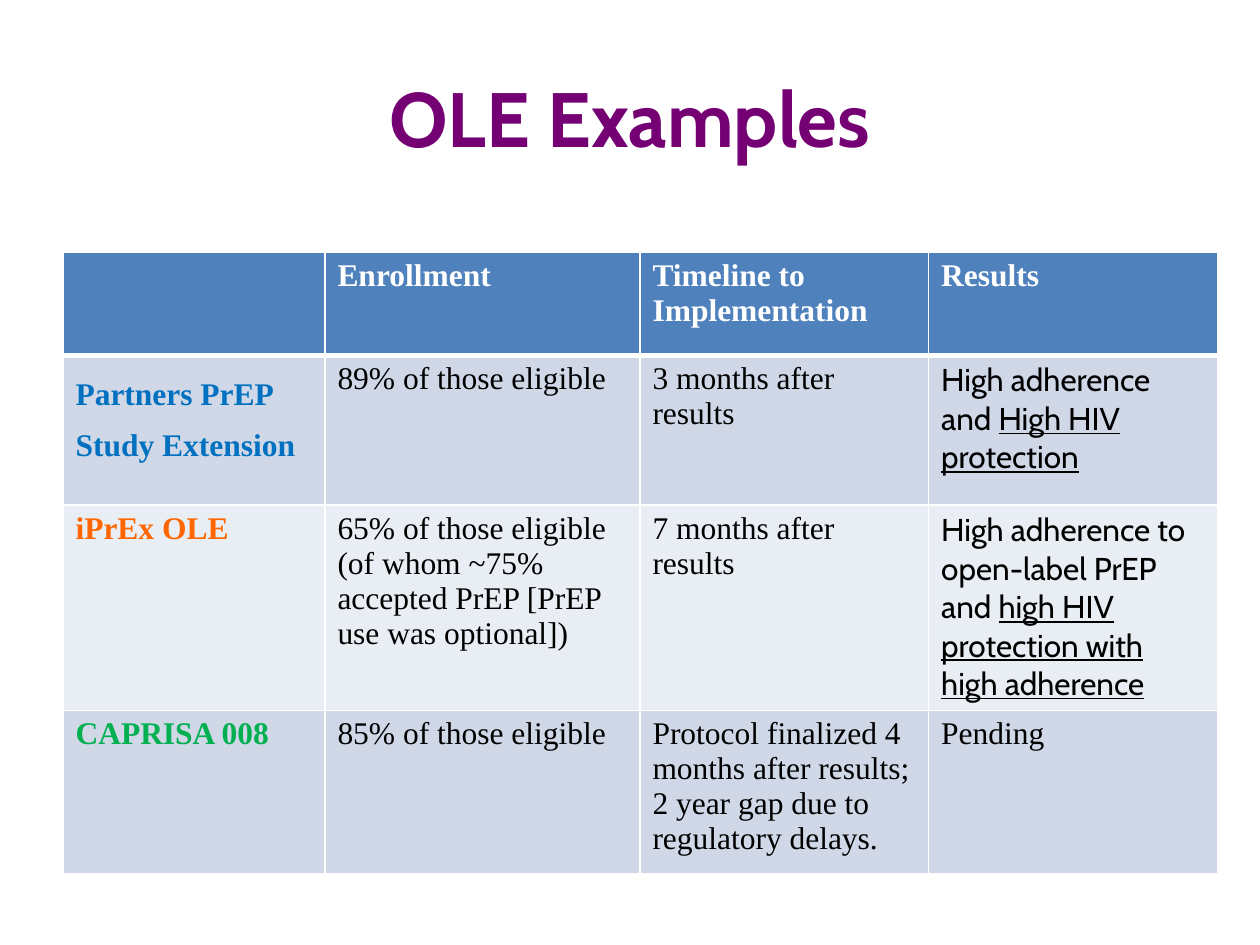
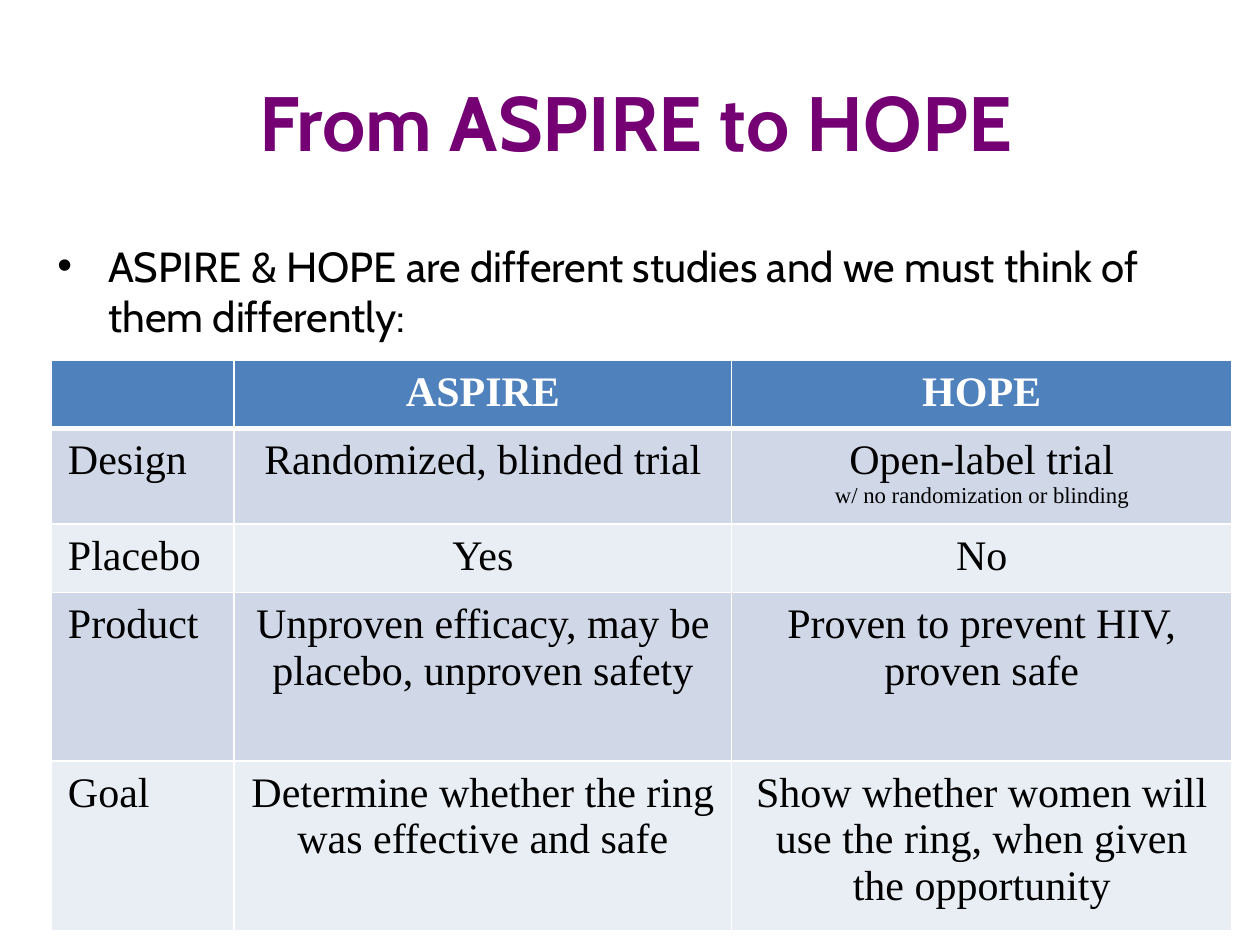
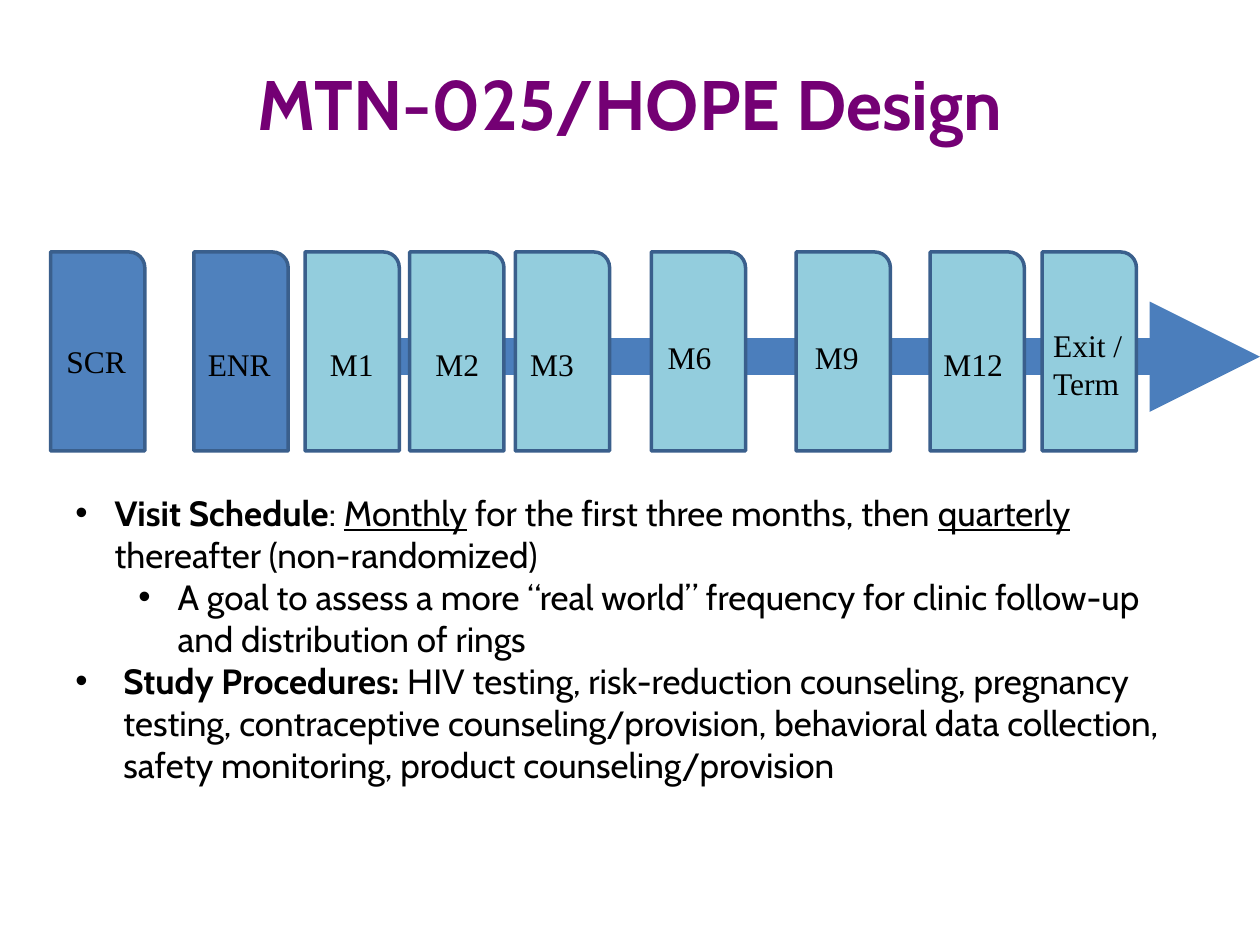
from lxml import etree
from pptx import Presentation
from pptx.dml.color import RGBColor
from pptx.enum.shapes import MSO_CONNECTOR, MSO_SHAPE
from pptx.enum.text import MSO_ANCHOR, PP_ALIGN
from pptx.oxml.ns import qn
from pptx.util import Cm, Pt

CENTER, LEFT = PP_ALIGN.CENTER, PP_ALIGN.LEFT
MIDDLE, TOP = MSO_ANCHOR.MIDDLE, MSO_ANCHOR.TOP
CARD, STRAIGHT = MSO_SHAPE.ROUND_1_RECTANGLE, MSO_CONNECTOR.STRAIGHT

# Shared look
SANS, SERIF = "Cabin", "Times New Roman"
PURPLE, BLACK, WHITE = "740074", "000000", "FFFFFF"
BLUE, AQUA, EDGE, SHAFT = "4F81BD", "93CDDD", "3A5F8C", "4B7EBC"
BANDS = ("D0D8E8", "E9EDF4")


def color(code):
    return RGBColor.from_string(code)


# Text
def write(para, parts, font=SANS, size=18, ink=BLACK, bold=False, align=LEFT):
    """Fill a paragraph from a string or from (text, marks) pairs."""
    if isinstance(parts, str):
        para.text = parts
        marks = [""]
    else:
        for text, _ in parts:
            para.add_run().text = text
        marks = [mark for _, mark in parts]
    para.alignment = align
    for run, mark in zip(para.runs, marks):
        run.font.name = font
        run.font.size = Pt(size)
        run.font.color.rgb = color(ink)
        run.font.bold = bold or "b" in mark
        run.font.underline = "u" in mark


def add_box(slide, left, top, width, height, anchor=TOP):
    box = slide.shapes.add_textbox(Cm(left), Cm(top), Cm(width), Cm(height))
    frame = box.text_frame
    frame.word_wrap = True
    frame.vertical_anchor = anchor
    return frame


def add_title(slide, text, left, top, width, height, size=44):
    frame = add_box(slide, left, top, width, height, MIDDLE)
    write(frame.paragraphs[0], text, size=size, ink=PURPLE, bold=True, align=CENTER)


def add_list(slide, items, left, top, width, height, size):
    """Each item is (left margin, hanging indent, parts)."""
    frame = add_box(slide, left, top, width, height)
    for index, (margin, hang, parts) in enumerate(items):
        para = frame.add_paragraph() if index else frame.paragraphs[0]
        props = para._p.get_or_add_pPr()
        props.set("marL", str(Cm(margin)))
        props.set("indent", str(-Cm(hang)))
        etree.SubElement(props, qn("a:buFont"), typeface="Arial")
        etree.SubElement(props, qn("a:buChar"), char="•")
        write(para, parts, size=size)


# Tables
def add_edges(cell, row):
    props = cell._tc.get_or_add_tcPr()
    for side in ("L", "R", "T", "B"):
        thick = (row, side) in ((0, "B"), (1, "T"))
        line = etree.SubElement(props, qn("a:ln" + side), w=str(Pt(3 if thick else 1)))
        fill = etree.SubElement(line, qn("a:solidFill"))
        etree.SubElement(fill, qn("a:srgbClr"), val=WHITE)


def add_grid(slide, left, top, cols, rows, data, style, inset=None):
    """style(row, col) gives the text options of a cell."""
    table = slide.shapes.add_table(
        len(rows), len(cols), Cm(left), Cm(top), Cm(sum(cols)), Cm(sum(rows))
    ).table
    for col, width in enumerate(cols):
        table.columns[col].width = Cm(width)
    for row, height in enumerate(rows):
        table.rows[row].height = Cm(height)
        for col, lines in enumerate(data[row]):
            cell = table.cell(row, col)
            add_edges(cell, row)
            cell.fill.solid()
            cell.fill.fore_color.rgb = color(BANDS[(row - 1) % 2] if row else BLUE)
            if inset:
                cell.margin_left = cell.margin_right = Cm(inset[0])
                cell.margin_top = cell.margin_bottom = Cm(inset[1])
            look = {"font": SERIF, **style(row, col)}
            if row == 0:
                look.update(ink=WHITE, bold=True)
            write(cell.text_frame.paragraphs[0], lines, **look)
    return table


# Timeline
def add_card(slide, left, fill):
    card = slide.shapes.add_shape(CARD, Cm(left), Cm(5.08), Cm(1.9), Cm(4.01))
    card.shadow.inherit = False
    card.fill.solid()
    card.fill.fore_color.rgb = color(fill)
    card.line.color.rgb = color(EDGE)
    card.line.width = Pt(2)


def add_label(slide, text, left, top, width, height=1.02):
    para = add_box(slide, left, top, width, height).paragraphs[0]
    write(para, text, font=SERIF)
    para.line_spacing = Pt(22)


def add_arrow(slide, start, end, level):
    arrow = slide.shapes.add_connector(
        STRAIGHT, Cm(start), Cm(level), Cm(end), Cm(level)
    )
    arrow.line.color.rgb = color(SHAFT)
    arrow.line.width = Pt(21)
    etree.SubElement(arrow.line._get_or_add_ln(), qn("a:tailEnd"), type="triangle")
    etree.SubElement(arrow._element.spPr, qn("a:effectLst"))


# Slides
def show_cases(slide):
    add_title(slide, "OLE Examples", 1.27, 0.76, 22.86, 3.18)
    data = [
        ["", "Enrollment", "Timeline to Implementation", "Results"],
        ["Partners PrEP Study Extension", "89% of those eligible",
         "3 months after results",
         [("High adherence and ", ""), ("High HIV protection", "u")]],
        ["iPrEx OLE",
         "65% of those eligible (of whom ~75% accepted PrEP [PrEP use was optional])",
         "7 months after results",
         [("High adherence to open-label PrEP and ", ""),
          ("high HIV protection with high adherence", "u")]],
        ["CAPRISA 008", "85% of those eligible",
         "Protocol finalized 4 months after results; 2 year gap due to regulatory delays.",
         "Pending"],
    ]
    inks = (WHITE, "0070C0", "FF6600", "00B050")

    def style(row, col):
        if col == 0:
            return {"ink": inks[row], "bold": True}
        return {"font": SANS} if col == 3 and row in (1, 2) else {}

    table = add_grid(slide, 1.27, 5.08, (5.28, 6.35, 5.82, 5.82),
                     (2.08, 3.02, 4.14, 3.05), data, style)
    table.cell(1, 0).text_frame.paragraphs[0].line_spacing = Pt(29)


def show_change(slide):
    add_title(slide, "From ASPIRE to HOPE", 1.07, 0.84, 23.5, 3.18)
    intro = ("ASPIRE & HOPE are different studies and we must think of "
             "them differently:")
    add_list(slide, [(1.02, 1.02, intro)], 0.91, 4.72, 23.93, 2.92, 24)
    data = [
        ["", "ASPIRE", "HOPE"],
        ["Design", "Randomized, blinded trial", "Open-label trial"],
        ["Placebo", "Yes", "No"],
        ["Product", "Unproven efficacy, may be placebo, unproven safety",
         "Proven to prevent HIV, proven safe"],
        ["Goal", "Determine whether the ring was effective and safe",
         "Show whether women will use the ring, when given the opportunity"],
    ]

    def style(row, col):
        return {"size": 24, "align": CENTER if col else LEFT}

    table = add_grid(slide, 1.04, 7.26, (3.68, 10.03, 10.08),
                     (1.37, 1.93, 1.37, 3.4, 3.4), data, style, (0.33, 0.18))
    note = table.cell(1, 2).text_frame.add_paragraph()
    write(note, "w/ no randomization or blinding", SERIF, 13, align=CENTER)


def show_design(slide):
    add_title(slide, "MTN-025/HOPE Design", 1.27, 0.89, 22.86, 2.34, 40)
    items = [
        (0.79, 0.79, [
            ("Visit Schedule", "b"), (": ", ""), ("Monthly", "u"),
            (" for the first three months, then ", ""), ("quarterly", "u"),
            (" thereafter (non-randomized)", "")]),
        (2.06, 0.79, "A goal to assess a more “real world” frequency for clinic "
                     "follow-up and distribution of rings"),
        (0.97, 0.97, [
            ("Study Procedures: ", "b"),
            ("HIV testing, risk-reduction counseling, pregnancy testing, "
             "contraceptive counseling/provision, behavioral data collection, "
             "safety monitoring, product counseling/provision", "")]),
    ]
    add_list(slide, items, 1.27, 9.78, 22.53, 6.25, 20)
    add_arrow(slide, 6.78, 25.4, 7.19)
    # Card left and fill, then the label's text, left, top, width and height
    visits = [
        (1.02, BLUE, ("SCR", 1.09, 6.76, 4.88)),
        (3.91, BLUE, ("ENR", 3.94, 6.81, 2.16)),
        (6.15, AQUA, ("M1", 6.4, 6.81, 1.98)),
        (8.26, AQUA, ("M2", 8.53, 6.81, 1.98)),
        (10.39, AQUA, ("M3", 10.44, 6.81, 1.98)),
        (13.13, AQUA, ("M6", 13.21, 6.68, 1.98)),
        (16.05, AQUA, ("M9", 16.18, 6.68, 1.98)),
        (18.75, AQUA, ("M12", 18.77, 6.81, 2.39)),
        (21.01, AQUA, ("Exit / Term", 20.98, 6.43, 3.0, 1.8)),
    ]
    for left, fill, _ in visits:
        add_card(slide, left, fill)
    for _, _, label in visits:
        add_label(slide, *label)


def main():
    deck = Presentation()
    deck.slide_width, deck.slide_height = Cm(25.4), Cm(19.05)
    for show in (show_cases, show_change, show_design):
        show(deck.slides.add_slide(deck.slide_layouts[6]))
    deck.save("out.pptx")


if __name__ == "__main__":
    main()
